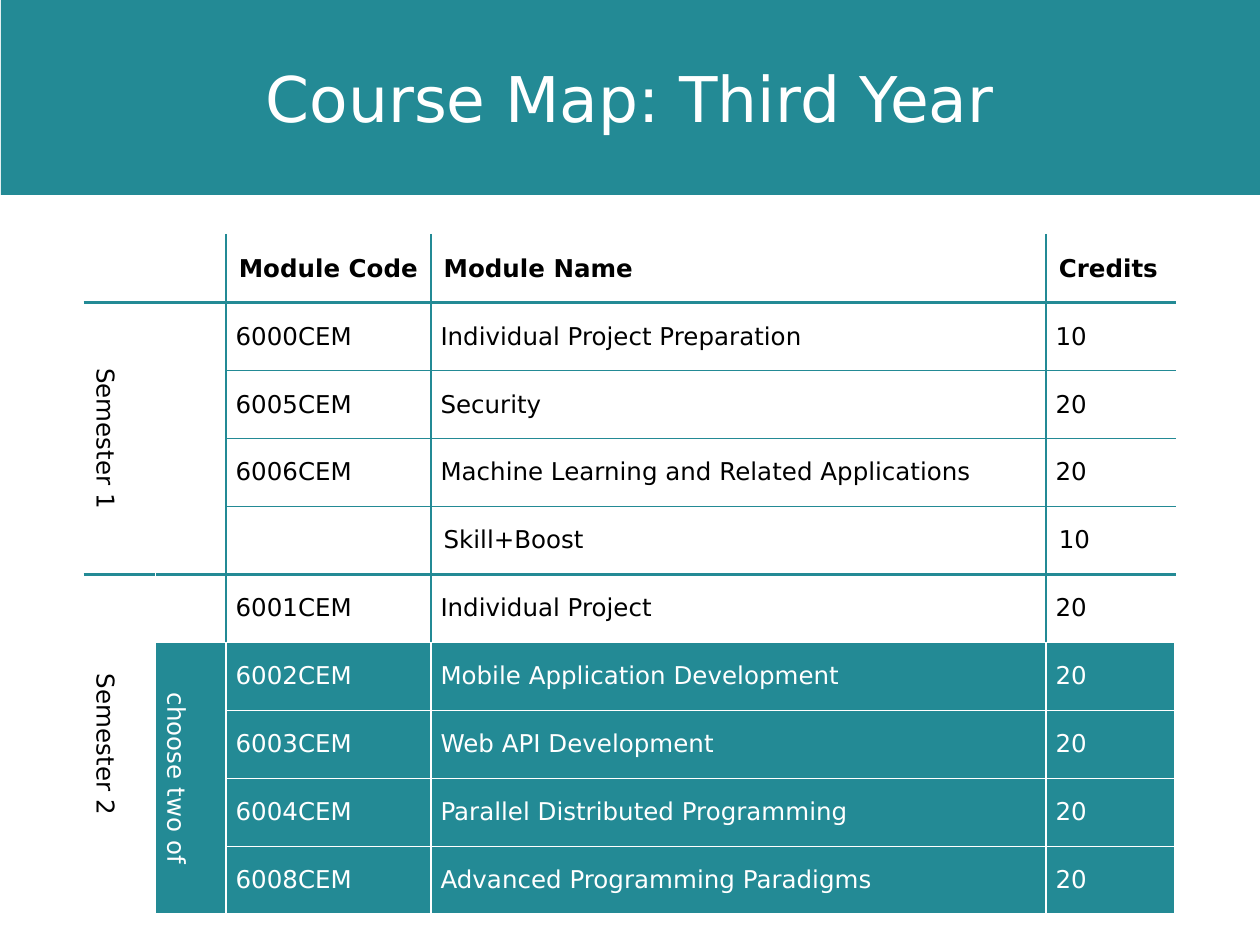
from dataclasses import dataclass

from lxml import etree
from pptx import Presentation
from pptx.dml.color import RGBColor
from pptx.enum import shapes, text
from pptx.oxml.ns import qn
from pptx.util import Cm, Pt


@dataclass(frozen=True)
class Theme:
    font: str = "DejaVu Sans"
    teal: str = "238A95"
    white: str = "FFFFFF"
    black: str = "000000"
    title_size: int = 36
    body_size: int = 14
    thin: float = 1
    thick: float = 2.25


# Table content: header, semester 1, semester 2, options
ROWS = [
    ("Module Code", "Module Name", "Credits"),
    ("6000CEM", "Individual Project Preparation", "10"),
    ("6005CEM", "Security", "20"),
    ("6006CEM", "Machine Learning and Related Applications", "20"),
    ("", "Skill+Boost", "10"),
    ("6001CEM", "Individual Project", "20"),
    ("6002CEM", "Mobile Application Development", "20"),
    ("6003CEM", "Web API Development", "20"),
    ("6004CEM", "Parallel Distributed Programming", "20"),
    ("6008CEM", "Advanced Programming Paradigms", "20"),
]
COL_WIDTHS = (1.43, 1.43, 4.13, 12.4, 2.6)
ROW_HEIGHT = 1.37
LABEL_COLS = 2
FIRST_OPTION = 6
SECTION_ENDS = (0, 4)
WIDE_MARGIN_ROWS = (0, 4)
# First row, first column, last row, last column, label
MERGES = [
    (0, 0, 0, 1, ""),
    (1, 0, 4, 1, "Semester 1"),
    (5, 0, 9, 0, "Semester 2"),
    (6, 1, 9, 1, "choose two of"),
]


class SlideBuilder:
    def __init__(self, prs, theme):
        self.theme = theme
        self.s = prs.slides.add_slide(prs.slide_layouts[5])

    def style(self, p, size, color, bold=False):
        f = p.font
        f.name, f.size, f.bold = self.theme.font, Pt(size), bold
        f.color.rgb = RGBColor.from_string(color)

    def band(self, x, y, w, h):
        sp = self.s.shapes.add_shape(shapes.MSO_SHAPE.RECTANGLE, Cm(x), Cm(y), Cm(w), Cm(h))
        sp.shadow.inherit = False
        sp.fill.solid()
        sp.fill.fore_color.rgb = RGBColor.from_string(self.theme.teal)
        sp.line.fill.background()
        self.s.shapes._spTree.insert(2, sp._element)  # behind the title

    def title(self, words, x, y, w, h):
        sp = self.s.shapes.title
        sp.left, sp.top, sp.width, sp.height = Cm(x), Cm(y), Cm(w), Cm(h)
        tf = sp.text_frame
        tf.text = words
        tf.vertical_anchor = text.MSO_ANCHOR.MIDDLE
        p = tf.paragraphs[0]
        p.alignment = text.PP_ALIGN.CENTER
        self.style(p, self.theme.title_size, self.theme.white)

    def row_edge(self, row, col):
        """Colour and width of the line below a row."""
        t = self.theme
        if row in SECTION_ENDS:
            return t.teal, t.thick
        inner = 0 < row < FIRST_OPTION - 1 and col >= LABEL_COLS
        return (t.teal if inner else t.white), t.thin

    def col_edge(self, row, col):
        """Colour and width of the line right of a column."""
        t = self.theme
        inner = row < FIRST_OPTION and LABEL_COLS - 1 <= col < len(COL_WIDTHS) - 1
        return (t.teal if inner else t.white), t.thin

    def borders(self, cell, row, col):
        last_row = row + cell.span_height - 1
        last_col = col + cell.span_width - 1
        edges = {
            "L": self.col_edge(row, col - 1),
            "R": self.col_edge(row, last_col),
            "T": self.row_edge(row - 1, col),
            "B": self.row_edge(last_row, col),
        }
        tcPr = cell._tc.get_or_add_tcPr()
        for side, (color, width) in edges.items():
            ln = etree.SubElement(tcPr, qn(f"a:ln{side}"), w=str(Pt(width)))
            fill = etree.SubElement(ln, qn("a:solidFill"))
            etree.SubElement(fill, qn("a:srgbClr"), val=color)

    def cell(self, cell, row, col, words):
        t = self.theme
        option = row >= FIRST_OPTION and col > 0
        self.borders(cell, row, col)
        cell.fill.solid()
        cell.fill.fore_color.rgb = RGBColor.from_string(t.teal if option else t.white)
        cell.vertical_anchor = text.MSO_ANCHOR.MIDDLE
        cell.text = words
        p = cell.text_frame.paragraphs[0]
        self.style(p, t.body_size, t.white if option else t.black, bold=row == 0)
        if col < LABEL_COLS:
            p.alignment = text.PP_ALIGN.CENTER
            cell._tc.get_or_add_tcPr().set("vert", "vert")
        elif row not in WIDE_MARGIN_ROWS:
            cell.margin_left = cell.margin_right = Cm(0.19)
            cell.margin_top = cell.margin_bottom = 0

    def table(self, x, y):
        frame = self.s.shapes.add_table(
            len(ROWS), len(COL_WIDTHS), Cm(x), Cm(y),
            Cm(sum(COL_WIDTHS)), Cm(ROW_HEIGHT * len(ROWS)))
        tbl = frame.table
        tbl.first_row = tbl.horz_banding = False
        for column, width in zip(tbl.columns, COL_WIDTHS):
            column.width = Cm(width)
        for row in tbl.rows:
            row.height = Cm(ROW_HEIGHT)
        labels = {}
        for top, left, bottom, right, label in MERGES:
            tbl.cell(top, left).merge(tbl.cell(bottom, right))
            labels[top, left] = label
        for i, values in enumerate(ROWS):
            row_labels = [labels.get((i, j), "") for j in range(LABEL_COLS)]
            for j, words in enumerate([*row_labels, *values]):
                self.cell(tbl.cell(i, j), i, j, words)


def main():
    prs = Presentation()
    prs.slide_width, prs.slide_height = Cm(25.4), Cm(19.05)
    b = SlideBuilder(prs, Theme())

    # Heading
    b.band(0.02, 0, 25.38, 3.93)
    b.title("Course Map: Third Year", 1.27, 0.38, 22.86, 3.18)

    # Module table
    b.table(1.7, 4.73)

    prs.save("out.pptx")


if __name__ == "__main__":
    main()
